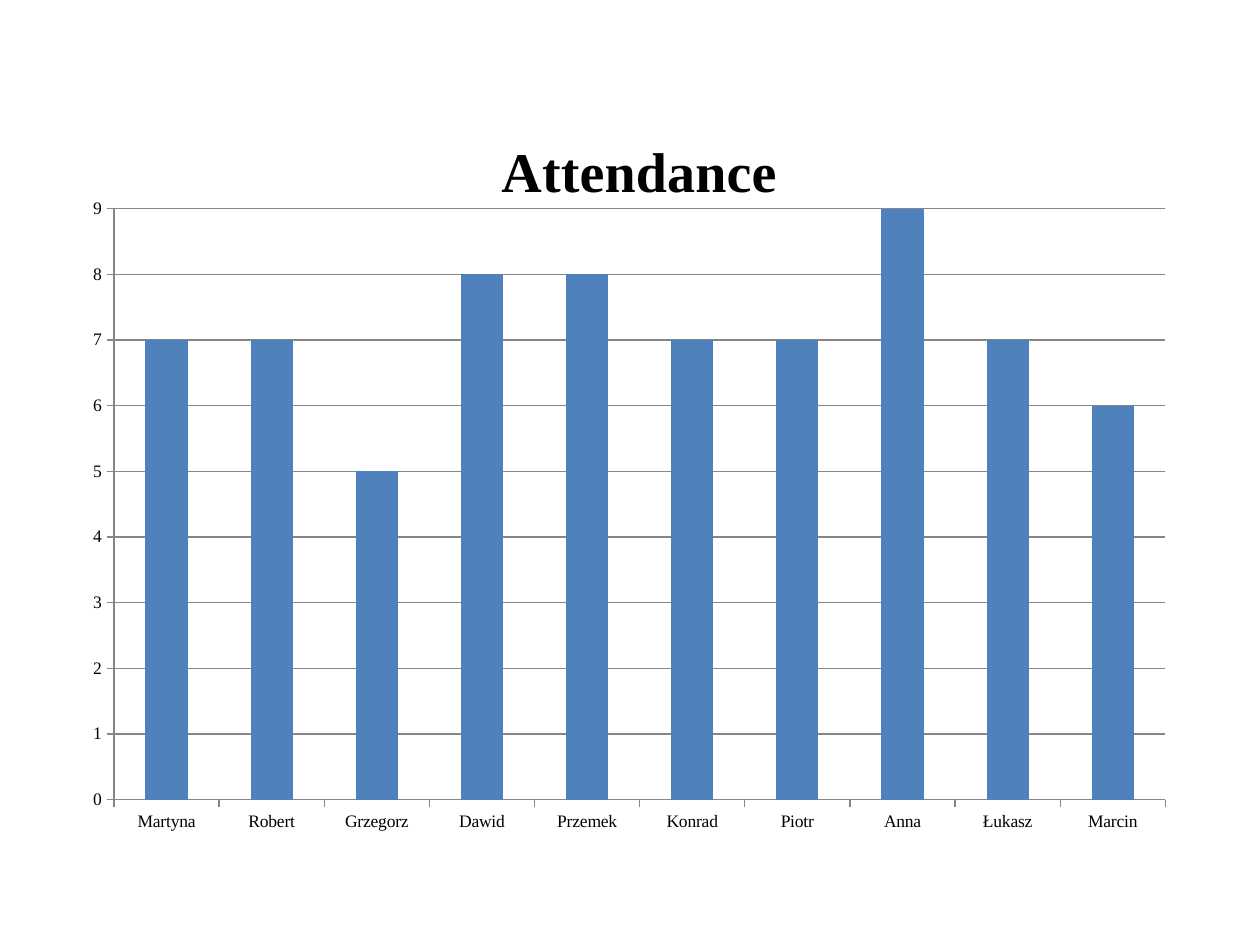
from lxml import etree
from pptx import Presentation
from pptx import util as u
from pptx.chart.data import CategoryChartData
from pptx.dml.color import RGBColor
from pptx.enum import chart as ch
from pptx.oxml import ns

COLORS = {"bar": "4F81BD", "text": "000000", "line": "868686"}
FONT = "Times New Roman"
ATTENDANCE = {
    "Martyna": 7, "Robert": 7, "Grzegorz": 5, "Dawid": 8, "Przemek": 8,
    "Konrad": 7, "Piotr": 7, "Anna": 9, "Łukasz": 7, "Marcin": 6,
}


def color(name):
    return RGBColor.from_string(COLORS[name])


def style_font(font, size, bold=False):
    font.name = FONT
    font.size = u.Pt(size)
    font.bold = bold
    font.color.rgb = color("text")


def write_text(frame, text, **font_format):
    frame.text = text
    style_font(frame.paragraphs[0].runs[0].font, **font_format)


def style_line(line):
    line.color.rgb = color("line")
    line.width = u.Pt(0.75)


def place(element, index, **fractions):
    """Give a chart part a manual layout in fractions of the chart."""
    old = element.find(ns.qn("c:layout"))
    if old is not None:
        element.remove(old)
    layout = etree.Element(ns.qn("c:layout"))
    element.insert(index, layout)
    manual = etree.SubElement(layout, ns.qn("c:manualLayout"))
    settings = {"xMode": "edge", "yMode": "edge", **fractions}
    if "w" in fractions:
        settings = {"layoutTarget": "inner", **settings}
    for tag, value in settings.items():
        etree.SubElement(manual, ns.qn(f"c:{tag}")).set("val", str(value))


def style_axis(axis):
    axis.major_tick_mark = ch.XL_TICK_MARK.OUTSIDE
    axis.minor_tick_mark = ch.XL_TICK_MARK.NONE
    style_line(axis.format.line)
    style_font(axis.tick_labels.font, size=10)


def add_attendance_chart(slide):
    data = CategoryChartData(number_format="General")
    data.categories = list(ATTENDANCE)
    data.add_series("Attendance", list(ATTENDANCE.values()))
    chart = slide.shapes.add_chart(
        ch.XL_CHART_TYPE.COLUMN_CLUSTERED, u.Inches(0.43), u.Inches(0.69),
        u.Inches(9.13), u.Inches(6.11), data).chart
    style_font(chart.font, size=10)
    chart.has_legend = False

    chart.has_title = True
    title = chart.chart_title
    write_text(title.text_frame, "Attendance", size=32, bold=True)
    title.include_in_layout = False
    place(title._element, 1, x=0.38, y=0.05)

    plot = chart.plots[0]
    plot.gap_width = 150
    plot.vary_by_categories = False
    bars = plot.series[0].format.fill
    bars.solid()
    bars.fore_color.rgb = color("bar")
    place(chart._chartSpace.chart.plotArea, 0, x=0.052, y=0.158, w=0.914, h=0.768)

    for axis in (chart.category_axis, chart.value_axis):
        style_axis(axis)
    counts = chart.value_axis
    counts.minimum_scale, counts.maximum_scale, counts.major_unit = 0, 9, 1
    counts.has_major_gridlines = True
    style_line(counts.major_gridlines.format.line)


def main():
    deck = Presentation()
    deck.slide_width, deck.slide_height = u.Inches(10), u.Inches(7.5)
    slide = deck.slides.add_slide(deck.slide_layouts[6])
    add_attendance_chart(slide)
    deck.save("out.pptx")


if __name__ == "__main__":
    main()
